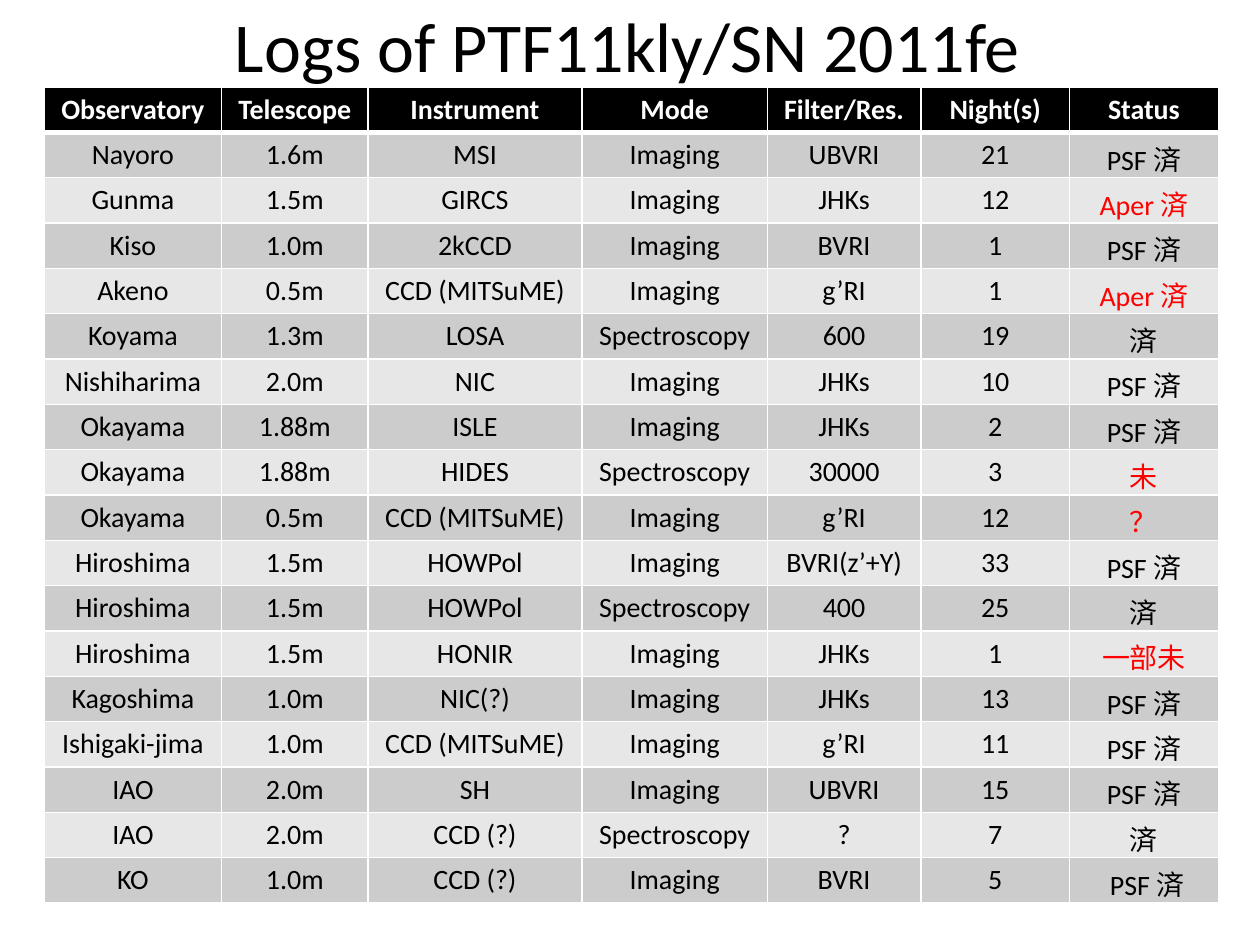
"""Build the slide with the observation logs of PTF11kly/SN 2011fe."""
import pptx
import pptx.dml.color
import pptx.enum.text
import pptx.oxml
import pptx.oxml.ns
import pptx.util
from pptx.util import Inches

FONT = "Calibri"
BLACK, WHITE, RED = "000000", "FFFFFF", "FF0000"
BAND_FILLS = ("CCCCCC", "E7E7E7")
COLUMN_WIDTHS = (1.41, 1.16, 1.7, 1.47, 1.22, 1.18, 1.18)
ROW_HEIGHT = 0.36
DONE_STATUSES = ("PSF 済", "済")
HEADINGS = ("Observatory", "Telescope", "Instrument", "Mode", "Filter/Res.", "Night(s)", "Status")
LOGS = (
    ("Nayoro", "1.6m", "MSI", "Imaging", "UBVRI", "21", "PSF 済"),
    ("Gunma", "1.5m", "GIRCS", "Imaging", "JHKs", "12", "Aper 済"),
    ("Kiso", "1.0m", "2kCCD", "Imaging", "BVRI", "1", "PSF 済"),
    ("Akeno", "0.5m", "CCD (MITSuME)", "Imaging", "g’RI", "1", "Aper 済"),
    ("Koyama", "1.3m", "LOSA", "Spectroscopy", "600", "19", "済"),
    ("Nishiharima", "2.0m", "NIC", "Imaging", "JHKs", "10", "PSF 済"),
    ("Okayama", "1.88m", "ISLE", "Imaging", "JHKs", "2", "PSF 済"),
    ("Okayama", "1.88m", "HIDES", "Spectroscopy", "30000", "3", "未"),
    ("Okayama", "0.5m", "CCD (MITSuME)", "Imaging", "g’RI", "12", "？"),
    ("Hiroshima", "1.5m", "HOWPol", "Imaging", "BVRI(z’+Y)", "33", "PSF 済"),
    ("Hiroshima", "1.5m", "HOWPol", "Spectroscopy", "400", "25", "済"),
    ("Hiroshima", "1.5m", "HONIR", "Imaging", "JHKs", "1", "一部未"),
    ("Kagoshima", "1.0m", "NIC(?)", "Imaging", "JHKs", "13", "PSF 済"),
    ("Ishigaki-jima", "1.0m", "CCD (MITSuME)", "Imaging", "g’RI", "11", "PSF 済"),
    ("IAO", "2.0m", "SH", "Imaging", "UBVRI", "15", "PSF 済"),
    ("IAO", "2.0m", "CCD (?)", "Spectroscopy", "?", "7", "済"),
    ("KO", "1.0m", "CCD (?)", "Imaging", "BVRI", "5", " PSF 済"),
)


def color(hex_string):
    """Return the colour for a hex string."""
    return pptx.dml.color.RGBColor.from_string(hex_string)


def write_text(text_frame, text, size, text_color, bold=False):
    """Write one centred paragraph into a text frame."""
    paragraph = text_frame.paragraphs[0]
    paragraph.text = text
    paragraph.alignment = pptx.enum.text.PP_ALIGN.CENTER
    paragraph.font.name = FONT
    paragraph.font.size = pptx.util.Pt(size)
    paragraph.font.bold = bold
    paragraph.font.color.rgb = color(text_color)


def add_title(slide, text):
    """Add the title above the table."""
    shape = slide.shapes.add_textbox(Inches(0.59), Inches(-0.03), Inches(8.78), Inches(0.77))
    shape.text_frame.word_wrap = True
    write_text(shape.text_frame, text, 40, BLACK)


def set_borders(cell, top, bottom):
    """Draw white borders around a cell, with given top and bottom widths."""
    properties = cell._tc.get_or_add_tcPr()
    for side, width in (("L", 1), ("R", 1), ("T", top), ("B", bottom)):
        properties.append(pptx.oxml.parse_xml(
            f'<a:ln{side} {pptx.oxml.ns.nsdecls("a")} w="{pptx.util.Pt(width)}">'
            f'<a:solidFill><a:srgbClr val="{WHITE}"/></a:solidFill></a:ln{side}>'))


def fill_cell(cell, text, row_index, text_color):
    """Set the text, margins, borders and fill of one table cell."""
    is_heading = row_index == 0
    cell.margin_top, cell.margin_bottom = pptx.util.Pt(3.2), 0
    set_borders(cell, 3 if row_index == 1 else 1, 3 if is_heading else 1)
    cell.fill.solid()
    cell.fill.fore_color.rgb = color(BLACK if is_heading else BAND_FILLS[(row_index - 1) % 2])
    write_text(cell.text_frame, text, 16, text_color, bold=is_heading)


def add_log_table(slide):
    """Add the table of logs, with open statuses in red."""
    rows = (HEADINGS, *LOGS)
    table = slide.shapes.add_table(
        len(rows), len(HEADINGS), Inches(0.35), Inches(0.69),
        Inches(sum(COLUMN_WIDTHS)), Inches(ROW_HEIGHT * len(rows))).table
    for column, width in zip(table.columns, COLUMN_WIDTHS):
        column.width = Inches(width)
    for row_index, values in enumerate(rows):
        table.rows[row_index].height = Inches(ROW_HEIGHT)
        for column_index, text in enumerate(values):
            is_status = column_index == len(HEADINGS) - 1
            if row_index == 0:
                text_color = WHITE
            elif is_status and text.strip() not in DONE_STATUSES:
                text_color = RED
            else:
                text_color = BLACK
            fill_cell(table.cell(row_index, column_index), text, row_index, text_color)


def main():
    """Build and save the presentation."""
    presentation = pptx.Presentation()
    presentation.slide_width, presentation.slide_height = Inches(10), Inches(7.5)
    slide = presentation.slides.add_slide(presentation.slide_layouts[6])
    add_title(slide, "Logs of PTF11kly/SN 2011fe")
    add_log_table(slide)
    presentation.save("out.pptx")


if __name__ == "__main__":
    main()
